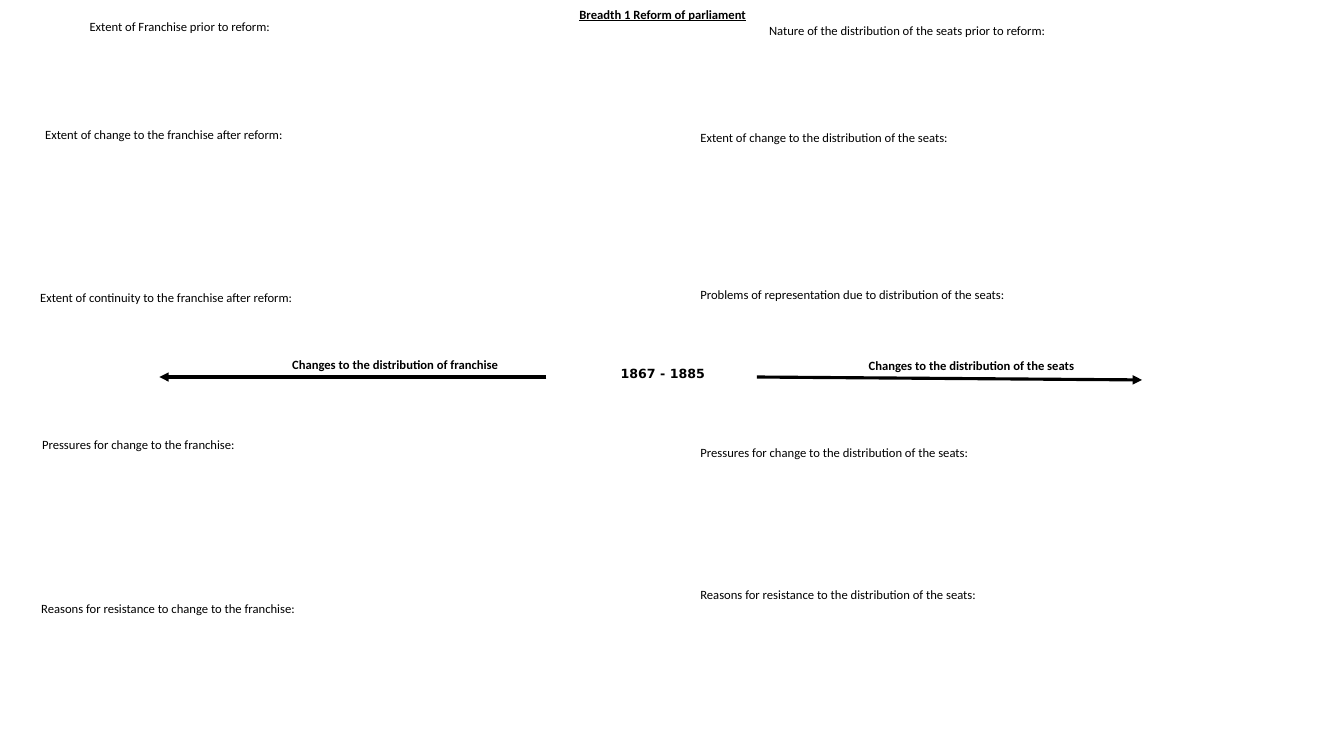
from dataclasses import dataclass

from lxml.etree import SubElement
from pptx import Presentation
from pptx.dml.color import RGBColor
from pptx.enum.shapes import MSO_CONNECTOR
from pptx.enum.text import MSO_AUTO_SIZE
from pptx.oxml.ns import qn
from pptx.util import Pt


@dataclass(frozen=True)
class Theme:
    ink: RGBColor = RGBColor(0, 0, 0)
    body_font: str = "Calibri"
    period_font: str = "DejaVu Sans"
    text_size: float = 9
    line_width: float = 2.25
    label_height: float = 18


THEME = Theme()
SEATS_LEFT = 493.2

# Text, left, top, width
FRANCHISE_PROMPTS = [
    ("Extent of Franchise prior to reform:", 56.9, 10.1, 145.4),
    ("Extent of change to the franchise after reform:", 25.2, 87.1, 186.5),
    ("Extent of continuity to the franchise after reform:", 21.6, 203.8, 197.3),
    ("Pressures for change to the franchise:", 23, 308.2, 154.1),
    ("Reasons for resistance to change to the franchise:", 22.3, 425.5, 198),
]
SEATS_PROMPTS = [
    ("Nature of the distribution of the seats prior to reform:", 542.2, 13, 214.6),
    ("Extent of change to the distribution of the seats:", SEATS_LEFT, 89.3, 193),
    ("Problems of representation due to distribution of the seats:", SEATS_LEFT, 201.6, 234.7),
    ("Pressures for change to the distribution of the seats:", SEATS_LEFT, 313.9, 208.1),
]


def add_label(slide, text, left, top, width, wrap=False, **font_format):
    box = slide.shapes.add_textbox(Pt(left), Pt(top), Pt(width), Pt(THEME.label_height))
    frame = box.text_frame
    frame.word_wrap = wrap
    frame.auto_size = MSO_AUTO_SIZE.SHAPE_TO_FIT_TEXT
    span = frame.paragraphs[0].add_run()
    span.text = text
    span.font.color.rgb = THEME.ink
    settings = {"name": THEME.body_font, "size": Pt(THEME.text_size), **font_format}
    for name, value in settings.items():
        setattr(span.font, name, value)


def add_arrow(slide, start, end):
    """Draw a straight line with a triangular head at its end."""
    arrow = slide.shapes.add_connector(
        MSO_CONNECTOR.STRAIGHT, *(Pt(length) for length in (*start, *end))
    )
    arrow.line.color.rgb = THEME.ink
    arrow.line.width = Pt(THEME.line_width)
    SubElement(arrow.line._get_or_add_ln(), qn("a:tailEnd"), type="triangle")
    SubElement(arrow._element.spPr, qn("a:effectLst"))


def main():
    deck = Presentation()
    deck.slide_width, deck.slide_height = Pt(960), Pt(540)
    slide = deck.slides.add_slide(deck.slide_layouts[6])

    add_label(slide, "1867 - 1885", 436.3, 257.8, 77, name=THEME.period_font, bold=True)
    add_arrow(slide, (390.2, 269.3), (113.8, 269.3))
    add_label(slide, "Changes to the distribution of franchise", 201.6, 251.3, 164.2, bold=True)
    add_arrow(slide, (540.7, 269.3), (815.8, 271.4))
    add_label(slide, "Changes to the distribution of the seats", 613.4, 252, 183.6,
              wrap=True, bold=True)

    for prompt in FRANCHISE_PROMPTS + SEATS_PROMPTS:
        add_label(slide, *prompt)
    add_label(slide, "Reasons for resistance to the distribution of the seats:",
              SEATS_LEFT, 415.4, 460, wrap=True)
    add_label(slide, "Breadth 1 Reform of parliament", 406.8, 1.4, 135.4,
              bold=True, underline=True)

    deck.save("out.pptx")


if __name__ == "__main__":
    main()
